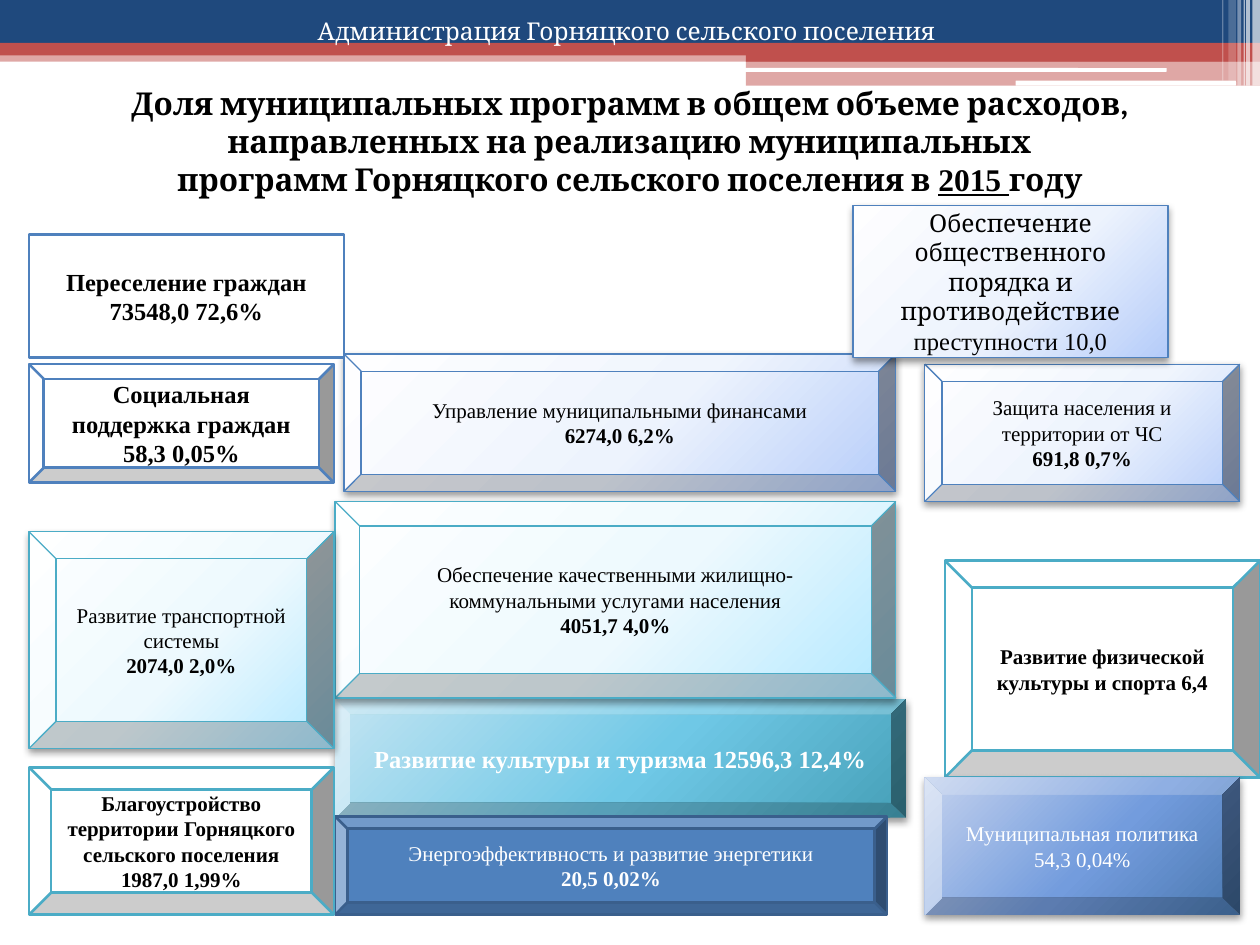
from lxml.etree import SubElement
from pptx import Presentation
from pptx.dml.color import RGBColor
from pptx.enum.shapes import MSO_SHAPE
from pptx.enum.text import MSO_ANCHOR, MSO_AUTO_SIZE, PP_ALIGN
from pptx.oxml import parse_xml
from pptx.oxml.ns import nsdecls, qn
from pptx.util import Inches, Pt

COLORS = {
    "white": "FFFFFF", "black": "000000", "navy": "1F497D", "red": "C0504D",
    "blue": "4F81BD", "dark blue": "3A5F8C", "teal": "4BACC6",
}
GRADIENTS = {
    "pale blue": ("FEFEFF", "EDF3FD", "B5CCF9"),
    "pale teal": ("FEFFFF", "EDF9FE", "B2E8FF"),
    "strong blue": ("C4D2EE", "739CDD", "4A78B0"),
    "strong teal": ("C2E4F2", "6FC8E6", "46A0B8"),
}
STOPS = (0, 55, 100)
SERIF, HEADING = "Times New Roman", "Cambria"

# left, top, width, height, color, opacity in percent
BANDS = [
    (0, 0.4, 10, 0.09, "red", 50),
    (0, 0, 10, 0.34, "navy", 100),
    (0, 0.34, 10, 0.1, "red", 100),
    (5.92, 0.39, 4.08, 0.1, "red", 100),
    (5.92, 0.48, 4.08, 0.2, "red", 50),
]
ROUNDED_BANDS = [
    (5.91, 0.54, 3.35, 0.03, "white", 100),
    (8.06, 0.64, 1.75, 0.04, "white", 100),
]
STRIPES = [
    (9.94, 0, 0.06, 0.68, "white", 65),
    (9.89, 0, 0.03, 0.68, "white", 65),
    (9.87, 0, 0.01, 0.68, "white", 60),
    (9.82, 0, 0.03, 0.68, "white", 40),
    (9.75, 0, 0.06, 0.64, "white", 20),
    (9.7, 0, 0.01, 0.64, "white", 30),
]

TITLE = "Администрация Горняцкого сельского поселения"
HEADING_LINES = [
    [("Доля муниципальных программ в общем объеме расходов, "
      "направленных на реализацию муниципальных", {})],
    [("программ Горняцкого сельского поселения в ", {}),
     ("2015 ", {"name": SERIF, "underline": True}), ("году", {})],
]

# One style per kind of box: fill, line, line width, font size, color, bold
STYLES = {
    "white blue": ("white", "blue", 1.5, 14, "black", True),
    "white teal": ("white", "teal", 1.5, 12, "black", True),
    "pale blue": ("pale blue", "blue", 0.75, 12, "black", False),
    "pale teal": ("pale teal", "teal", 0.75, 12, "black", False),
    "solid blue": ("blue", "dark blue", 1.5, 12, "white", False),
    "strong blue": ("strong blue", None, 0, 12, "white", False),
    "strong teal": ("strong teal", None, 0, 14, "white", True),
}
BOLD = {"bold": True}
LARGE = {"size": Pt(14)}
# Position, shape, style, paragraphs of (text, format) runs
PROGRAMS = [
    ((0.23, 2.89, 2.42, 0.94), "BEVEL", "white blue",
     [[("Социальная поддержка граждан", {})], [("58,3 0,05%", {})]]),
    ((2.73, 2.81, 4.38, 1.09), "BEVEL", "pale blue",
     [[("Управление муниципальными финансами", {})], [("6274,0 6,2%", BOLD)]]),
    ((7.5, 4.45, 2.5, 1.72), "BEVEL", "white teal",
     [[("Развитие физической культуры и спорта 6,4", {})]]),
    ((2.66, 5.55, 4.53, 0.94), "BEVEL", "strong teal",
     [[("Развитие культуры и туризма 12596,3 12,4%", {})]]),
    ((2.66, 6.48, 4.38, 0.78), "BEVEL", "solid blue",
     [[("Энергоэффективность и развитие энергетики", {})], [("20,5 0,02%", BOLD)]]),
    ((2.66, 3.98, 4.45, 1.56), "BEVEL", "pale teal",
     [[("Обеспечение качественными жилищно-коммунальными услугами населения", {})],
      [("4051,7 4,0%", BOLD)]]),
    ((0.23, 4.22, 2.42, 1.72), "BEVEL", "pale teal",
     [[("Развитие транспортной системы", {})], [("2074,0 2,0%", BOLD)]]),
    ((7.34, 2.89, 2.5, 1.09), "BEVEL", "pale blue",
     [[("Защита населения и территории от ЧС", {})], [("691,8 0,7%", BOLD)]]),
    ((7.34, 6.17, 2.5, 1.09), "BEVEL", "strong blue",
     [[("Муниципальная политика", {})], [("54,3 0,04%", {})]]),
    ((0.23, 6.09, 2.42, 1.17), "BEVEL", "white teal",
     [[("Благоустройство территории Горняцкого сельского поселения 1987,0 1,99%", {})]]),
]
TOP_PROGRAMS = [
    ((0.23, 1.86, 2.5, 0.98), "FLOWCHART_PROCESS", "white blue",
     [[("Переселение граждан 73548,0 72,6%", {})]]),
    ((6.77, 1.63, 2.5, 1.21), "FLOWCHART_PROCESS", "pale blue",
     [[("Обеспечение общественного порядка и противодействие ",
        {"name": HEADING, **LARGE}), ("преступности 10,0", LARGE)]]),
]


def rgb(color):
    return RGBColor.from_string(COLORS[color])


def add_filled_shape(slide, kind, position, color, opacity=100):
    shape = slide.shapes.add_shape(kind, *map(Inches, position))
    shape.shadow.inherit = False
    shape.line.fill.background()
    shape.fill.solid()
    shape.fill.fore_color.rgb = rgb(color)
    if opacity < 100:
        color_element = shape.fill._xPr.find(qn("a:solidFill"))[0]
        SubElement(color_element, qn("a:alpha"), val=str(opacity * 1000))
    return shape


def set_gradient(shape, name):
    """Replace the solid fill by a radial one and add a soft shadow below."""
    stops = "".join(
        f'<a:gs pos="{stop * 1000}"><a:srgbClr val="{color}"/></a:gs>'
        for stop, color in zip(STOPS, GRADIENTS[name]))
    properties = shape.element.spPr
    solid = properties.find(qn("a:solidFill"))
    properties.replace(solid, parse_xml(
        f'<a:gradFill {nsdecls("a")} rotWithShape="1"><a:gsLst>{stops}</a:gsLst>'
        '<a:path path="circle"><a:fillToRect l="-40000" t="-90000" '
        'r="140000" b="190000"/></a:path></a:gradFill>'))
    properties.find(qn("a:effectLst")).append(parse_xml(
        f'<a:outerShdw {nsdecls("a")} blurRad="{Pt(4.1)}" dist="{Pt(2)}" '
        'dir="5400000" rotWithShape="0"><a:srgbClr val="000000">'
        '<a:alpha val="40000"/></a:srgbClr></a:outerShdw>'))


def write_text(frame, paragraphs, color, alignment=PP_ALIGN.CENTER, **base):
    frame.word_wrap = True
    for index, runs in enumerate(paragraphs):
        paragraph = frame.add_paragraph() if index else frame.paragraphs[0]
        paragraph.alignment = alignment
        for text, changes in runs:
            run = paragraph.add_run()
            run.text = text
            run.font.color.rgb = rgb(color)
            for attribute, value in {**base, **changes}.items():
                setattr(run.font, attribute, value)


def add_program(slide, position, kind, style, paragraphs):
    fill, line, line_width, size, color, bold = STYLES[style]
    is_gradient = fill in GRADIENTS
    shape = add_filled_shape(slide, getattr(MSO_SHAPE, kind), position,
                             "white" if is_gradient else fill)
    if is_gradient:
        set_gradient(shape, fill)
    if line:
        shape.line.color.rgb = rgb(line)
        shape.line.width = Pt(line_width)
    shape.text_frame.vertical_anchor = MSO_ANCHOR.MIDDLE
    write_text(shape.text_frame, paragraphs, color,
               name=SERIF, size=Pt(size), bold=bold)
    return shape


def add_title(slide):
    title = slide.shapes.title
    slide.shapes._spTree.append(title.element)  # in front of the bands
    title.left, title.top, title.width, title.height = map(
        Inches, (2.42, -0.23, 12.36, 0.94))
    title.text_frame.auto_size = MSO_AUTO_SIZE.NONE
    title.text_frame.vertical_anchor = MSO_ANCHOR.MIDDLE
    write_text(title.text_frame, [[(TITLE, {})]], "white", PP_ALIGN.LEFT,
               name=HEADING, size=Pt(14))


def main():
    presentation = Presentation()
    presentation.slide_width, presentation.slide_height = Inches(10), Inches(7.5)
    slide = presentation.slides.add_slide(presentation.slide_layouts[5])
    for kind, bands in ((MSO_SHAPE.RECTANGLE, BANDS),
                        (MSO_SHAPE.ROUNDED_RECTANGLE, ROUNDED_BANDS),
                        (MSO_SHAPE.RECTANGLE, STRIPES)):
        for *position, color, opacity in bands:
            add_filled_shape(slide, kind, position, color, opacity)
    add_title(slide)
    for program in PROGRAMS:
        shape = add_program(slide, *program)
    shape.adjustments[0] = 0.15
    heading = slide.shapes.add_textbox(*map(Inches, (0, 0.62, 10, 1.01)))
    write_text(heading.text_frame, HEADING_LINES, "black",
               name=HEADING, size=Pt(18), bold=True)
    for program in TOP_PROGRAMS:
        add_program(slide, *program)
    presentation.save("out.pptx")


if __name__ == "__main__":
    main()
